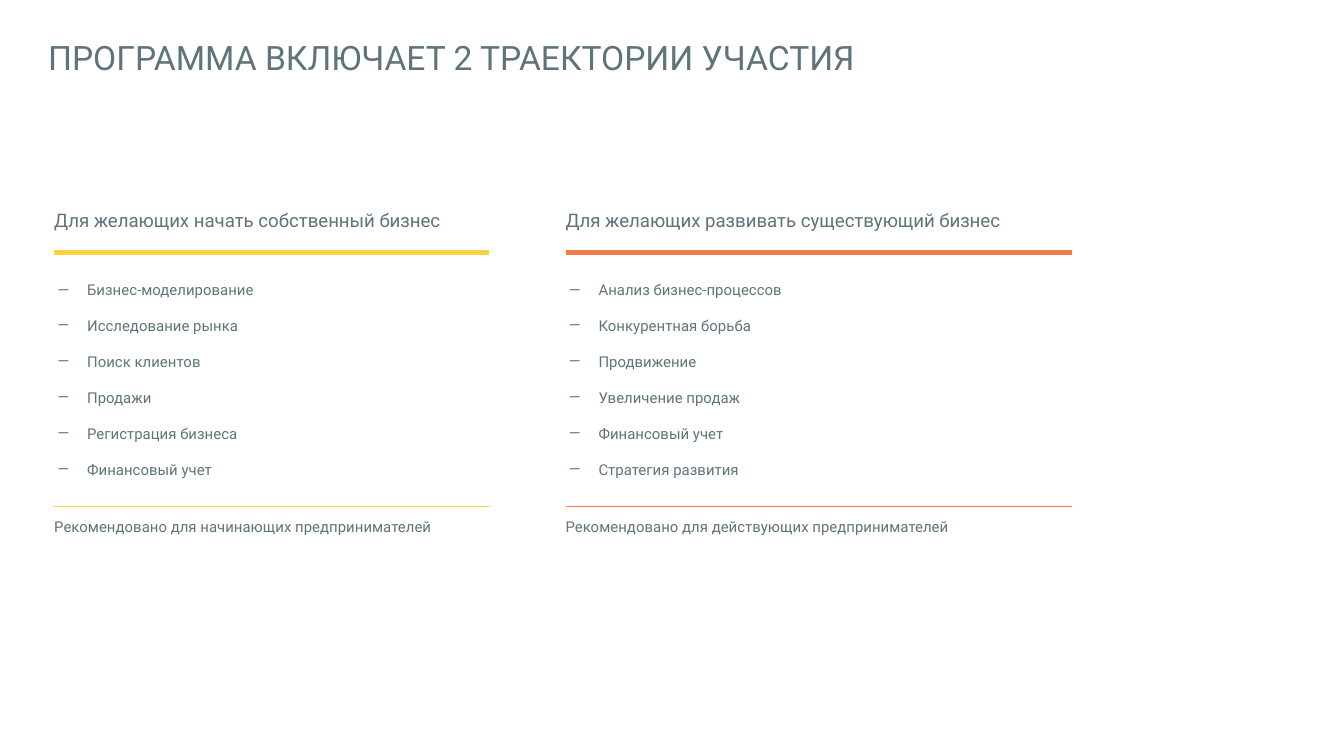
from lxml.etree import SubElement
from pptx import Presentation
from pptx.dml.color import RGBColor
from pptx.enum.shapes import MSO_CONNECTOR as Connector
from pptx.enum.text import MSO_ANCHOR as Anchor
from pptx.oxml.ns import qn
from pptx.util import Inches, Pt

SLIDE_WIDTH = Inches(10)
SLIDE_HEIGHT = SLIDE_WIDTH * 9 // 16
SLATE = RGBColor(0x5F, 0x74, 0x7A)
YELLOW = RGBColor(0xFE, 0xD1, 0x42)
ORANGE = RGBColor(0xF3, 0x7B, 0x46)
WHITE = RGBColor(0xFF, 0xFF, 0xFF)
FONT = "Roboto"
INSET = Inches(0.1)

TITLE = "ПРОГРАММА ВКЛЮЧАЕТ 2 ТРАЕКТОРИИ УЧАСТИЯ"
TRACKS = [
    {
        "left": 4.05, "width": 32.35, "color": YELLOW,
        "heading": "Для желающих начать собственный бизнес",
        "topics": ["Бизнес-моделирование", "Исследование рынка", "Поиск клиентов",
                   "Продажи", "Регистрация бизнеса", "Финансовый учет"],
        "footer": "Рекомендовано для начинающих предпринимателей",
    },
    {
        "left": 42.1, "width": 37.65, "color": ORANGE,
        "heading": "Для желающих развивать существующий бизнес",
        "topics": ["Анализ бизнес-процессов", "Конкурентная борьба", "Продвижение",
                   "Увеличение продаж", "Финансовый учет", "Стратегия развития"],
        "footer": "Рекомендовано для действующих предпринимателей",
    },
]


def across(percent):
    return int(SLIDE_WIDTH * percent / 100)


def down(percent):
    return int(SLIDE_HEIGHT * percent / 100)


def add_dash(paragraph):
    properties = paragraph._p.get_or_add_pPr()
    properties.set("marL", str(Inches(0.5)))
    properties.set("indent", str(-Inches(0.22)))
    color = SubElement(properties, qn("a:buClr"))
    SubElement(color, qn("a:srgbClr"), val=str(SLATE))
    SubElement(properties, qn("a:buFont"), typeface=FONT)
    SubElement(properties, qn("a:buChar"), char="—")


def add_text(slide, left, top, width, height, lines, size, dashed=False, bottom=INSET):
    box = slide.shapes.add_textbox(across(left), down(top), across(width), down(height))
    frame = box.text_frame
    frame_format = {
        "word_wrap": True, "vertical_anchor": Anchor.TOP,
        "margin_left": INSET, "margin_right": INSET,
        "margin_top": INSET, "margin_bottom": bottom,
    }
    for name, value in frame_format.items():
        setattr(frame, name, value)
    for index, line in enumerate(lines):
        paragraph = frame.add_paragraph() if index else frame.paragraphs[0]
        if index:
            paragraph.space_before = Pt(9.6)
        if dashed:
            add_dash(paragraph)
        run = paragraph.add_run()
        run.text = line
        for name, value in {"name": FONT, "size": Pt(size)}.items():
            setattr(run.font, name, value)
        run.font.color.rgb = SLATE


def add_rule(slide, left, top, width, color, weight):
    rule = slide.shapes.add_connector(
        Connector.STRAIGHT, across(left), down(top), across(left + width), down(top))
    rule.line.color.rgb = color
    rule.line.width = Pt(weight)
    SubElement(rule._element.spPr, qn("a:effectLst"))


def add_track(slide, left, width, color, heading, topics, footer):
    add_text(slide, left - 1, 26.2, width + 1, 6.6, [heading], 10)
    add_rule(slide, left, 33.4, width, color, 2.25)
    add_text(slide, left - 3.55, 35.4, 32.4, 29.5, topics, 8, dashed=True)
    add_rule(slide, left, 67, width, color, 0.75)
    add_text(slide, left - 1, 66.7, 32.4, 4.3, [footer], 8, bottom=0)


def main():
    presentation = Presentation()
    presentation.slide_width = SLIDE_WIDTH
    presentation.slide_height = SLIDE_HEIGHT
    slide = presentation.slides.add_slide(presentation.slide_layouts[6])
    slide.background.fill.solid()
    slide.background.fill.fore_color.rgb = WHITE
    add_text(slide, 2.6, 3.1, 89.5, 10, [TITLE], 18)
    for track in TRACKS:
        add_track(slide, **track)
    presentation.save("out.pptx")


if __name__ == "__main__":
    main()
